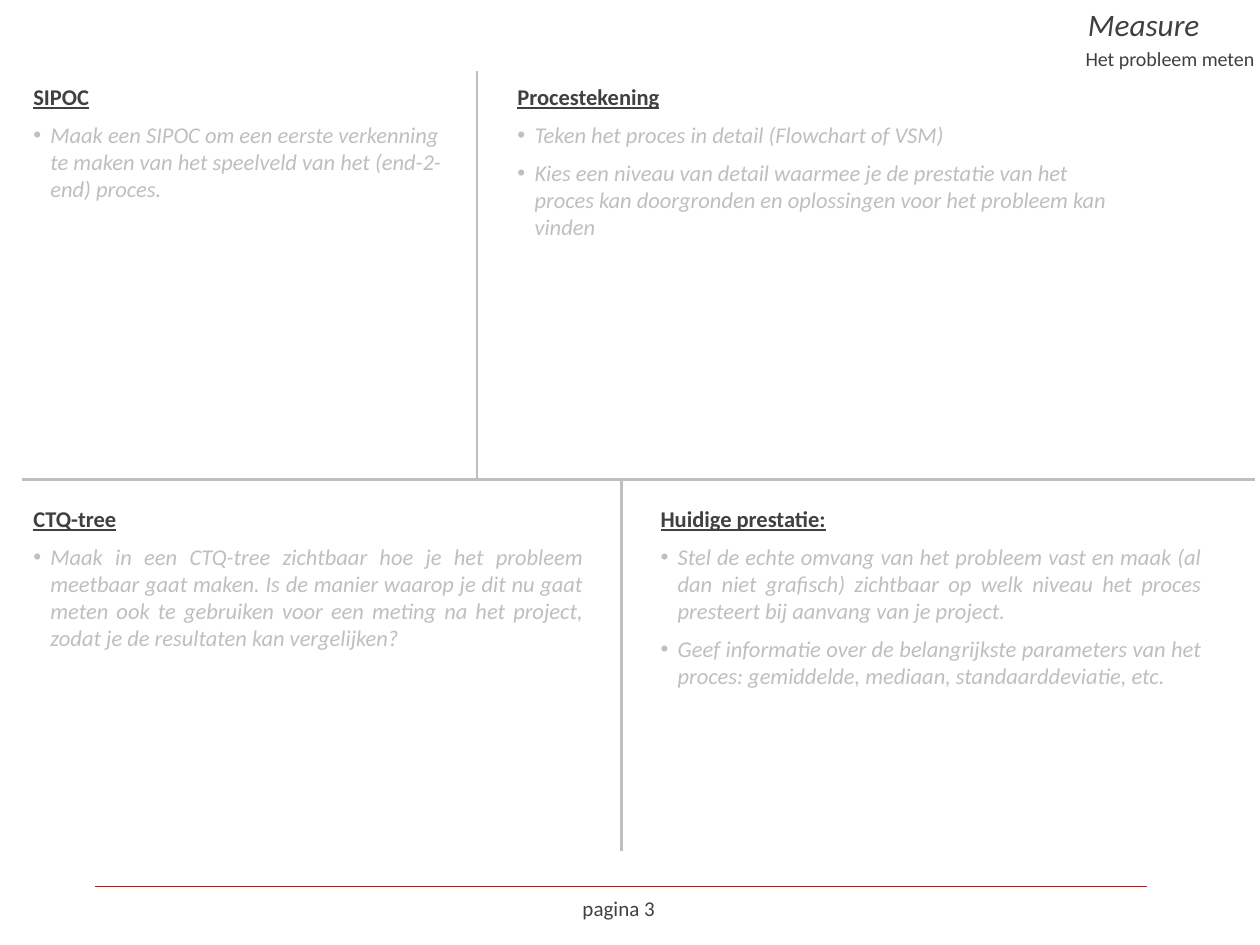
from lxml import etree
from pptx import Presentation
from pptx.dml.color import RGBColor
from pptx.enum.shapes import MSO_CONNECTOR
from pptx.enum.text import PP_ALIGN
from pptx.oxml.ns import qn
from pptx.util import Inches, Pt

LEFT, CENTER, RIGHT, JUSTIFY = PP_ALIGN.LEFT, PP_ALIGN.CENTER, PP_ALIGN.RIGHT, PP_ALIGN.JUSTIFY
STRAIGHT = MSO_CONNECTOR.STRAIGHT
FONT, DARK, GREY, RED = "Calibri", "404040", "BFBFBF", "FF0000"
INDENT = 0.19
PANEL_INSETS = (0.13, 0.07)

# heading, (left, top, width, height), alignment of the bullets, bullets
PANELS = [
    ("SIPOC", (0.24, 0.85, 4.84, 1.5), LEFT, [
        "Maak een SIPOC om een eerste verkenning te maken van het speelveld "
        "van het (end-2-end) proces.",
    ]),
    ("Procestekening", (5.62, 0.85, 6.9, 1.95), LEFT, [
        "Teken het proces in detail (Flowchart of VSM)",
        "Kies een niveau van detail waarmee je de prestatie van het proces kan "
        "doorgronden en oplossingen voor het probleem kan vinden",
    ]),
    ("CTQ-tree", (0.24, 5.54, 6.37, 2.26), JUSTIFY, [
        "Maak in een CTQ-tree zichtbaar hoe je het probleem meetbaar gaat maken. "
        "Is de manier waarop je dit nu gaat meten ook te gebruiken voor een meting "
        "na het project, zodat je de resultaten kan vergelijken?",
    ]),
    ("Huidige prestatie:", (7.21, 5.54, 6.27, 2.26), JUSTIFY, [
        "Stel de echte omvang van het probleem vast en maak (al dan niet grafisch) "
        "zichtbaar op welk niveau het proces presteert bij aanvang van je project.",
        "Geef informatie over de belangrijkste parameters van het proces: "
        "gemiddelde, mediaan, standaarddeviatie, etc.",
    ]),
]

# text, (left, top, width, height), insets, alignment, size, italic, wrap
LABELS = [
    ("Measure", (11.99, 0.01, 1.46, 0.52), (0.1, 0.05), LEFT, 25, True, False),
    ("Het probleem meten", (12.06, 0.52, 1.88, 0.27), (0, 0), RIGHT, 16, False, False),
    ("pagina 3 ", (5.86, 9.88, 2.08, 0.33), (0.14, 0.07), CENTER, 16.8, False, True),
]

# start x, start y, end x, end y, colour, width
LINES = [
    (1.05, 9.85, 12.74, 9.85, RED, 1.35),
    (0.24, 5.33, 13.94, 5.33, GREY, 2.25),
    (5.3, 0.79, 5.3, 5.33, GREY, 2.25),
    (6.91, 5.33, 6.91, 9.46, GREY, 2.25),
]


def color(hex_code):
    return RGBColor.from_string(hex_code)


def add_box(slide, place, insets, wrap=True):
    frame = slide.shapes.add_textbox(*map(Inches, place)).text_frame
    frame.word_wrap = wrap
    frame.margin_left = frame.margin_right = Inches(insets[0])
    frame.margin_top = frame.margin_bottom = Inches(insets[1])
    return frame


def add_span(para, text, size, hex_code, bold=False, italic=False, underline=False):
    span = para.add_run()
    span.text = text
    font = span.font
    font.name, font.size = FONT, Pt(size)
    font.bold, font.italic, font.underline = bold, italic, underline
    font.color.rgb = color(hex_code)


def add_bullet(para):
    """Give the paragraph a hanging bullet."""
    properties = para._p.get_or_add_pPr()
    properties.set("marL", str(Inches(INDENT)))
    properties.set("indent", str(-Inches(INDENT)))
    etree.SubElement(properties, qn("a:buFont")).set("typeface", "Arial")
    etree.SubElement(properties, qn("a:buChar")).set("char", "•")


def add_panel(slide, heading, place, align, bullets):
    frame = add_box(slide, place, PANEL_INSETS)
    add_span(frame.paragraphs[0], heading, 18, DARK, bold=True, underline=True)
    for text in bullets:
        para = frame.add_paragraph()
        add_bullet(para)
        para.alignment = align
        para.space_before = Pt(9)
        add_span(para, text, 18, GREY, italic=True)


def add_label(slide, text, place, insets, align, size, italic, wrap):
    para = add_box(slide, place, insets, wrap).paragraphs[0]
    para.alignment = align
    add_span(para, text, size, DARK, italic=italic)


def add_line(slide, x1, y1, x2, y2, hex_code, width):
    line = slide.shapes.add_connector(STRAIGHT, *map(Inches, (x1, y1, x2, y2)))
    line.line.color.rgb = color(hex_code)
    line.line.width = Pt(width)
    etree.SubElement(line._element.spPr, qn("a:effectLst"))


def main():
    deck = Presentation()
    deck.slide_width, deck.slide_height = Inches(14), Inches(10.5)
    slide = deck.slides.add_slide(deck.slide_layouts[6])
    for line in LINES:
        add_line(slide, *line)
    for panel in PANELS:
        add_panel(slide, *panel)
    for label in LABELS:
        add_label(slide, *label)
    deck.save("out.pptx")


if __name__ == "__main__":
    main()
